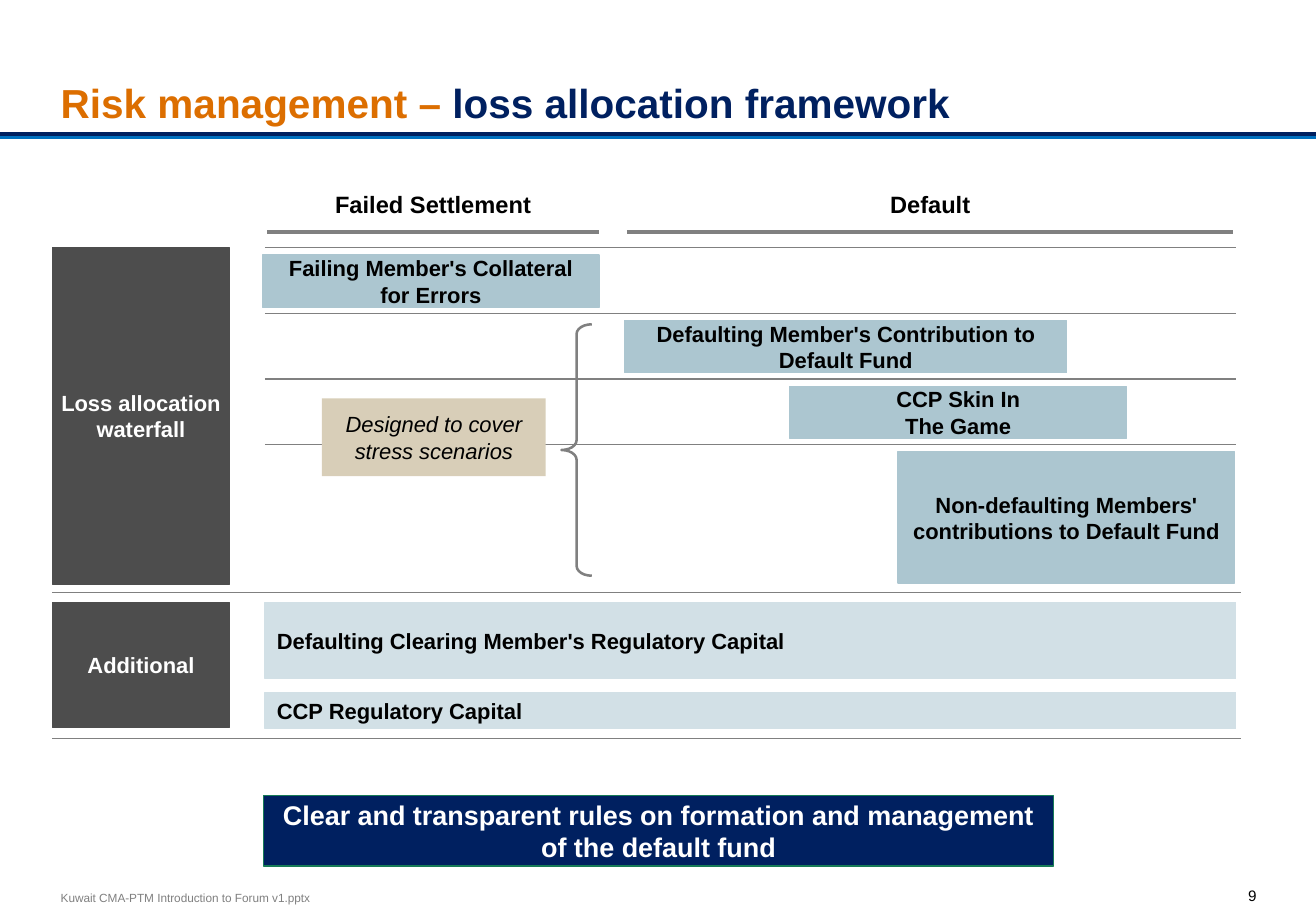
from dataclasses import dataclass

from lxml.etree import SubElement
from pptx import Presentation
from pptx.dml.color import RGBColor
from pptx.enum.shapes import MSO_CONNECTOR as Link, MSO_SHAPE as Shape
from pptx.enum.text import MSO_ANCHOR as Anchor, PP_ALIGN as Align
from pptx.oxml.ns import qn
from pptx.util import Emu, Pt

SCALE = 9144  # EMU per px, 100 px to the inch
WIDTH, HEIGHT = 1083, 750
FONT = "Arial"
COLOR = {
    "navy": "002060", "blue": "0070C0", "orange": "DC6E00", "green": "177B57",
    "grey": "808080", "dark": "4D4D4D", "steel": "ACC6D0", "pale": "D2E0E6",
    "sand": "D8CEB8", "white": "FFFFFF", "black": "000000",
}
TOP, STEP, GAP = 204, 54, 6  # waterfall rows
LEFT, SPAN = 218, 799        # chart area


@dataclass
class Box:
    text: str
    x: int
    y: int
    w: int
    h: int
    fill: str = ""
    edge: str = ""
    ink: str = "black"
    size: int = 13
    bold: bool = True
    italic: bool = False
    align: Align = Align.CENTER
    anchor: Anchor = Anchor.MIDDLE
    side: int = 10
    pad: int = 10


@dataclass
class Rule:
    x: int
    y: int
    w: int
    color: str = "grey"
    weight: float = 0.75


def px(n: int) -> Emu:
    return Emu(n * SCALE)


def rgb(name: str) -> RGBColor:
    return RGBColor.from_string(COLOR[name])


def draw_rule(shapes, rule: Rule) -> None:
    line = shapes.add_connector(Link.STRAIGHT, px(rule.x), px(rule.y),
                                px(rule.x + rule.w), px(rule.y))
    line.line.color.rgb = rgb(rule.color)
    line.line.width = Pt(rule.weight)
    SubElement(line._element.spPr, qn("a:effectLst"))


def draw_box(shapes, box: Box):
    """Draw a filled rectangle, or a plain text box when there is no fill."""
    place = px(box.x), px(box.y), px(box.w), px(box.h)
    if box.fill:
        shape = shapes.add_shape(Shape.RECTANGLE, *place)
        shape.shadow.inherit = False
        shape.fill.solid()
        shape.fill.fore_color.rgb = rgb(box.fill)
        if box.edge:
            shape.line.color.rgb = rgb(box.edge)
            shape.line.width = Pt(0.75)
        else:
            shape.line.fill.background()
    else:
        shape = shapes.add_textbox(*place)
    frame = shape.text_frame
    frame.text = box.text
    frame.word_wrap = True
    frame.vertical_anchor = box.anchor
    frame.margin_left = frame.margin_right = px(box.side)
    frame.margin_top = frame.margin_bottom = px(box.pad)
    for para in frame.paragraphs:
        para.alignment = box.align
        for run in para.runs:
            style(run.font, box)
    return shape


def style(font, box: Box) -> None:
    font.name, font.size = FONT, Pt(box.size)
    font.bold, font.italic = box.bold, box.italic
    font.color.rgb = rgb(box.ink)


def draw_title(shapes) -> None:
    box = Box("Risk management –", 50, 18, 983, 91, ink="orange", size=24,
              align=Align.LEFT, anchor=Anchor.BOTTOM, side=0, pad=5)
    para = draw_box(shapes, box).text_frame.paragraphs[0]
    run = para.add_run()
    run.text = " loss allocation framework"
    style(run.font, box)
    run.font.color.rgb = rgb("navy")


def draw_brace(shapes) -> None:
    brace = shapes.add_shape(Shape.LEFT_BRACE, px(462), px(267), px(25), px(207))
    brace.adjustments[0] = 0.32
    brace.shadow.inherit = False
    brace.fill.background()
    brace.line.color.rgb = rgb("grey")
    brace.line.width = Pt(1.5)


def head(text: str, x: int, w: int) -> Box:
    return Box(text, x, 143, w, 47, "white", size=14, anchor=Anchor.BOTTOM)


def stage(text: str, row: int, x: int, w: int = 277, h: int = 43,
          side: int = 10) -> Box:
    return Box(text, x, TOP + row * STEP + GAP, w, h, "steel", "steel", side=side)


def group(text: str, y: int, h: int) -> Box:
    return Box(text, 43, y, 146, h, "dark", "dark", "white", side=0)


def capital(text: str, y: int, h: int) -> Box:
    return Box(text, LEFT, y, SPAN, h, "pale", "pale", align=Align.LEFT)


HEADS = [head("Failed Settlement", LEFT, 277), head("Default", 514, 503)]
RULES = [
    Rule(0, 113, WIDTH, "blue", 2.25),
    Rule(0, 110, WIDTH, "navy", 2.25),
    *(Rule(h.x + 2, 191, h.w - 4, weight=2) for h in HEADS),
    *(Rule(LEFT, TOP + row * STEP, SPAN) for row in range(4)),
    *(Rule(43, y, 978) for y in (488, 608)),
]
BOXES = [
    stage("Failing Member's Collateral for Errors", 0, 216),
    stage("Defaulting Member's Contribution to Default Fund", 1, 514, 364),
    stage("CCP Skin In\nThe Game", 2, 650),
    stage("Non-defaulting Members' contributions to Default Fund", 3, 739,
          h=108, side=0),
    group("Loss allocation waterfall", TOP, 277),
    group("Additional", 496, 103),
    capital("Defaulting Clearing Member's Regulatory Capital", 496, 63),
    capital("CCP Regulatory Capital", 570, 30),
    Box("Designed to cover stress scenarios", 265, 328, 184, 64, "sand",
        bold=False, italic=True),
    Box("Clear and transparent rules on formation and management of the "
        "default fund", 217, 655, 650, 58, "navy", "green", "white", 16, pad=5),
    Box("Kuwait CMA-PTM Introduction to Forum v1.pptx", 50, 733, 300, 12,
        ink="grey", size=7, bold=False, align=Align.LEFT, side=0, pad=0),
    Box("9", 1013, 730, 21, 14, size=9, bold=False, align=Align.RIGHT,
        anchor=Anchor.TOP, side=0, pad=0),
]


def main() -> None:
    deck = Presentation()
    deck.slide_width, deck.slide_height = px(WIDTH), px(HEIGHT)
    shapes = deck.slides.add_slide(deck.slide_layouts[6]).shapes
    draw_title(shapes)
    draw_brace(shapes)
    for box in HEADS:
        draw_box(shapes, box)
    for rule in RULES:
        draw_rule(shapes, rule)
    for box in BOXES:
        draw_box(shapes, box)
    deck.save("out.pptx")


if __name__ == "__main__":
    main()
